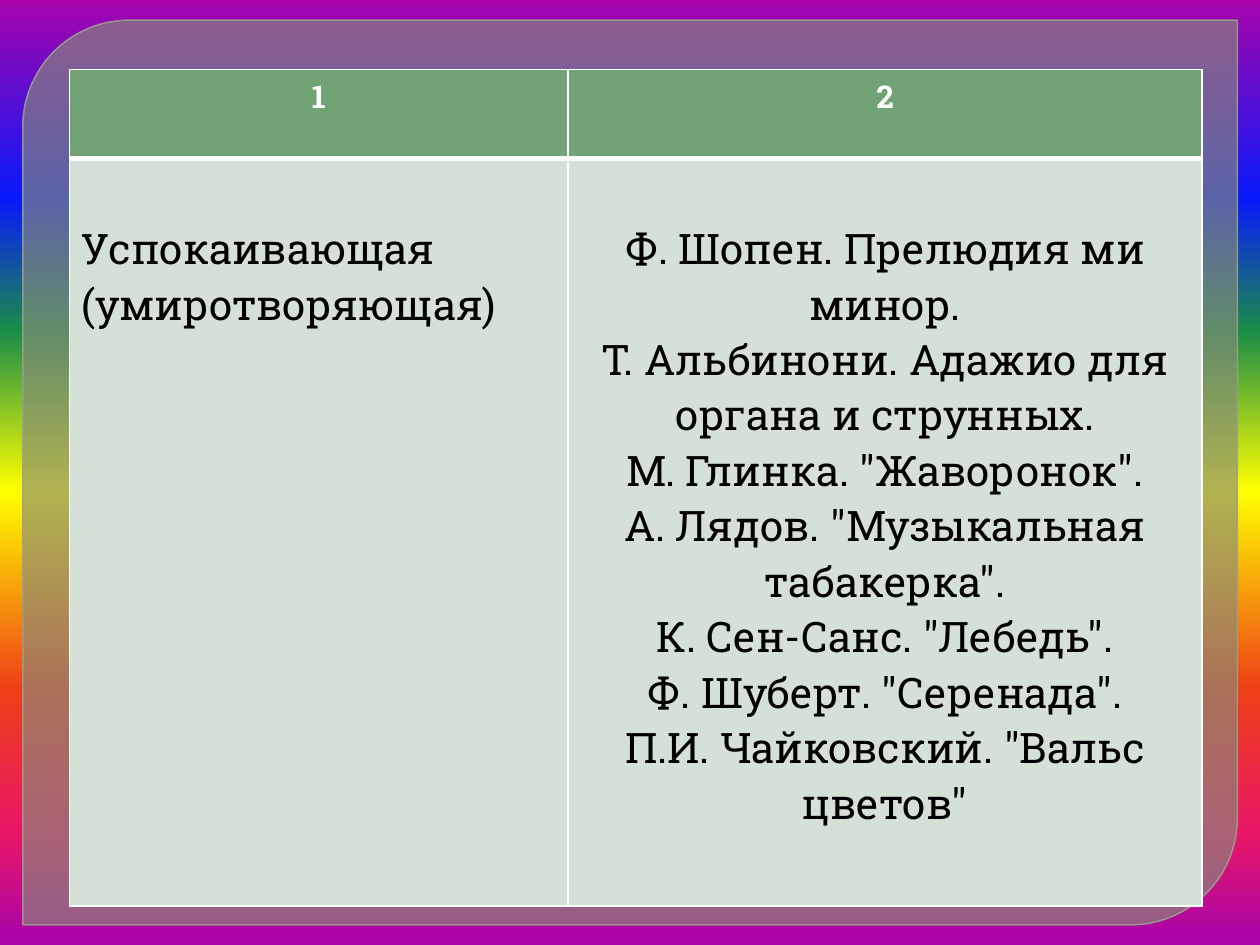
from pptx import Presentation
from pptx.util import Pt
from pptx.dml.color import RGBColor as RGB
from pptx.enum.shapes import MSO_SHAPE as Shape
from pptx.enum.text import PP_ALIGN as Align
from pptx.oxml import parse_xml
from pptx.oxml.ns import nsdecls, qn
from lxml.etree import SubElement

# Content
HEADS = ["1", "2"]
MOOD = ["Успокаивающая (умиротворяющая)"]
WORKS = [
    "Ф. Шопен. Прелюдия ми минор.",
    "Т. Альбинони. Адажио для органа и струнных.",
    "М. Глинка. \"Жаворонок\".",
    "А. Лядов. \"Музыкальная табакерка\".",
    "К. Сен-Санс. \"Лебедь\".",
    "Ф. Шуберт. \"Серенада\".",
    "П.И. Чайковский. \"Вальс цветов\"",
]
ROWS = [[[head] for head in HEADS], [MOOD, WORKS]]
ALIGNS = [[Align.CENTER, Align.CENTER], [Align.LEFT, Align.CENTER]]

# Style
FONT = "Roboto Slab"
COLORS = {"panel": "888B7B", "edge": "9DA090", "rule": "FFFFFF"}
STYLES = [
    {"fill": "72A376", "text": "FFFFFF", "size": 18, "bold": True,
     "top": 3.6, "rules": {"L": 1, "R": 1, "T": 1, "B": 3}},
    {"fill": "D5E0D6", "text": "000000", "size": 24, "bold": False,
     "top": 35.3, "rules": {"L": 1, "R": 1, "T": 3, "B": 1}},
]
RAINBOW = [(0, "A603AB"), (21, "0819FB"), (35, "1A8D48"), (52, "FFFF00"),
           (73, "EE3F17"), (88, "E81766"), (100, "A603AB")]
WIDTHS = [285.1, 362.2]
HEIGHTS = [51.1, 427]


def fade(fill, pct):
    """Make a solid fill partly transparent."""
    tone = fill._xPr.find(qn("a:solidFill"))[0]
    SubElement(tone, qn("a:alpha"), val=str(pct * 1000))


def rule(cell, side, width):
    """Draw one border of a cell."""
    cell._tc.get_or_add_tcPr().append(parse_xml(
        f'<a:ln{side} {nsdecls("a")} w="{Pt(width)}"><a:solidFill>'
        f'<a:srgbClr val="{COLORS["rule"]}"/></a:solidFill></a:ln{side}>'))


def write(cell, lines, align, style):
    """Style one cell and put its lines in."""
    for side, width in style["rules"].items():
        rule(cell, side, width)
    cell.fill.solid()
    cell.fill.fore_color.rgb = RGB.from_string(style["fill"])
    cell.margin_top = Pt(style["top"])
    cell.text = "\n".join(lines)
    for para in cell.text_frame.paragraphs:
        para.alignment = align
        font = para.font
        font.name, font.size, font.bold = FONT, Pt(style["size"]), style["bold"]
        font.color.rgb = RGB.from_string(style["text"])


deck = Presentation()
deck.slide_width, deck.slide_height = Pt(720), Pt(540)
slide = deck.slides.add_slide(deck.slide_layouts[6])

# Rainbow background, top to bottom
back = slide.background.fill
back.gradient()
back.gradient_angle = 270
stops = slide.background._cSld.find(".//" + qn("a:gsLst"))
for stop in list(stops):
    stops.remove(stop)
for pos, color in RAINBOW:
    stop = SubElement(stops, qn("a:gs"), pos=str(pos * 1000))
    SubElement(stop, qn("a:srgbClr"), val=color)

# Translucent panel
panel = slide.shapes.add_shape(Shape.ROUND_2_DIAG_RECTANGLE,
                               Pt(13), Pt(11.5), Pt(694), Pt(517))
panel.shadow.inherit = False
panel.adjustments[0], panel.adjustments[1] = 0.118, 0
panel.fill.solid()
panel.fill.fore_color.rgb = RGB.from_string(COLORS["panel"])
fade(panel.fill, 65)
panel.line.width = Pt(0.87)
panel.line.color.rgb = RGB.from_string(COLORS["edge"])
fade(panel.line.fill, 88)

# Table of moods and works
table = slide.shapes.add_table(len(ROWS), len(WIDTHS), Pt(39.6), Pt(39.6),
                               Pt(sum(WIDTHS)), Pt(sum(HEIGHTS))).table
for col, width in zip(table.columns, WIDTHS):
    col.width = Pt(width)
for r, (row, style) in enumerate(zip(ROWS, STYLES)):
    table.rows[r].height = Pt(HEIGHTS[r])
    for c, lines in enumerate(row):
        write(table.cell(r, c), lines, ALIGNS[r][c], style)

deck.save("out.pptx")
